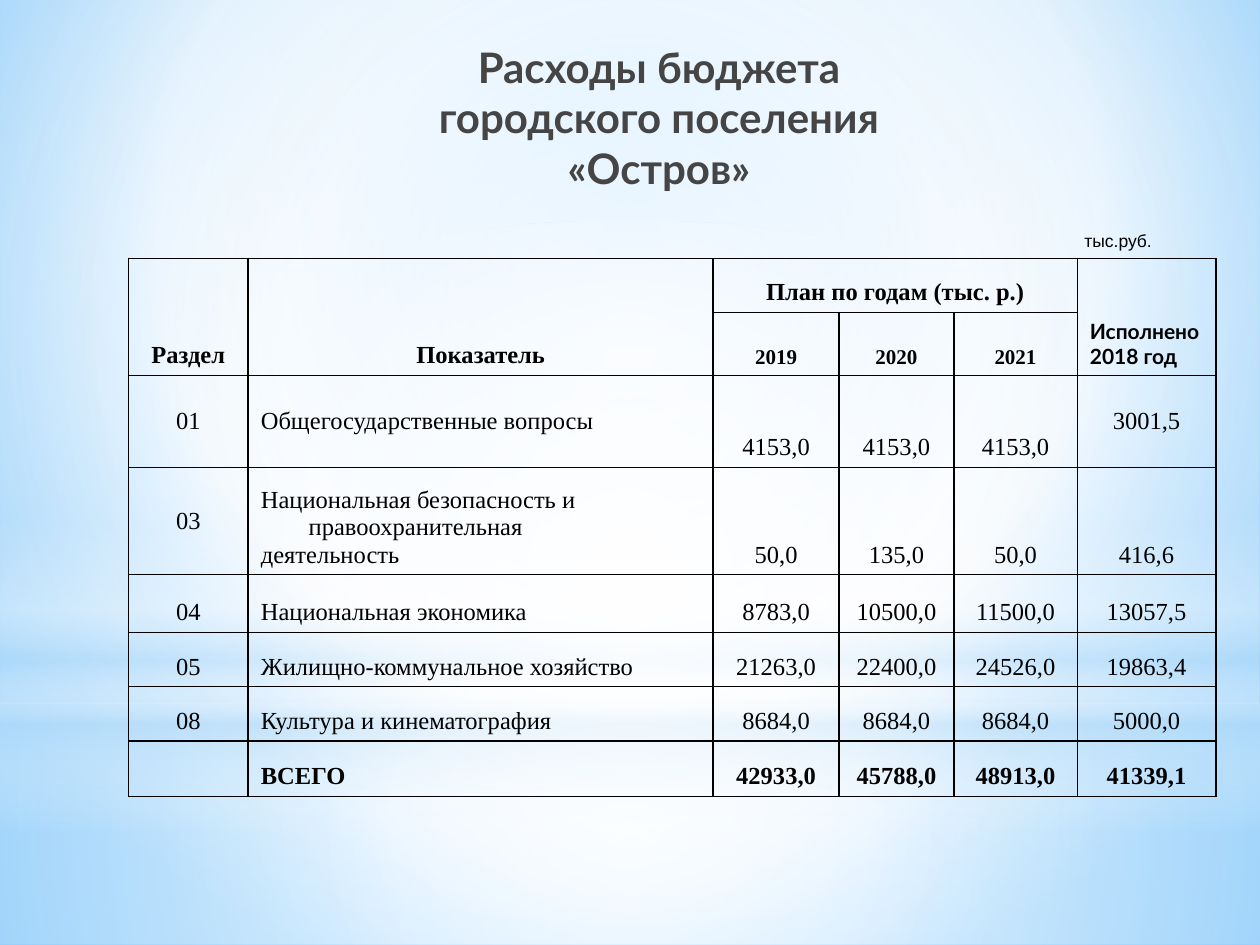
from lxml.etree import SubElement
from pptx import Presentation
from pptx.dml.color import RGBColor
from pptx.enum.shapes import MSO_SHAPE
from pptx.enum.text import MSO_ANCHOR, PP_ALIGN
from pptx.oxml.ns import qn
from pptx.util import Inches, Pt

W, H = 10, 7.5
COLORS = {"text": "000000", "title": "454545", "white": "FFFFFF",
          "haze": "B4DCFA", "sky": "9ED5FF", "deep": "5BB9FF"}
SERIF, SANS = "Times New Roman", "Lato"
HANG = Inches(0.38)
CENTER, LEFT, RIGHT = PP_ALIGN.CENTER, PP_ALIGN.LEFT, PP_ALIGN.RIGHT
MIDDLE_OF_BOX = (50, 50, 50, 50)

COLS = [0.95, 3.69, 1, 0.91, 0.98, 1.1]
ROWS = [0.43, 0.38, 0.73, 0.85, 0.46, 0.43, 0.43, 0.44]
YEARS = ["2019", "2020", "2021"]
BUDGET = [
    ["01", "Общегосударственные вопросы", "4153,0", "4153,0", "4153,0", "3001,5"],
    ["03", "Национальная безопасность и правоохранительная\nдеятельность",
     "50,0", "135,0", "50,0", "416,6"],
    ["04", "Национальная экономика", "8783,0", "10500,0", "11500,0", "13057,5"],
    ["05", "Жилищно-коммунальное хозяйство", "21263,0", "22400,0", "24526,0", "19863,4"],
    ["08", "Культура и кинематография", "8684,0", "8684,0", "8684,0", "5000,0"],
    ["", "ВСЕГО", "42933,0", "45788,0", "48913,0", "41339,1"],
]
# Cells centred vertically, as (row, column); the others sit at the bottom
MIDDLE_CELLS = {(2, 0), (2, 1), (2, 5), (3, 0)}


def write(tf, text, size=14, font=SERIF, color="text", bold=False,
          align=CENTER, hang=False):
    """Fill a text frame, one paragraph for each line of text."""
    tf.word_wrap = True
    for i, line in enumerate(text.split("\n")):
        p = tf.paragraphs[0] if i == 0 else tf.add_paragraph()
        p.alignment = align
        if hang:
            pPr = p._p.get_or_add_pPr()
            pPr.set("marL", str(HANG))
            pPr.set("indent", str(-HANG))
        r = p.add_run()
        r.text = line
        r.font.size, r.font.name, r.font.bold = Pt(size), font, bold
        r.font.color.rgb = RGBColor.from_string(COLORS[color])


def set_gradient(fill, root, stops, center=None):
    """Stops are (position, colour, opacity) in percent; no center means top to bottom."""
    fill.gradient()
    grad = root.find(".//" + qn("a:gradFill"))
    for child in list(grad):
        grad.remove(child)
    gs_list = SubElement(grad, qn("a:gsLst"))
    for pos, color, opacity in stops:
        gs = SubElement(gs_list, qn("a:gs"), pos=str(pos * 1000))
        clr = SubElement(gs, qn("a:srgbClr"), val=COLORS[color])
        if opacity < 100:
            SubElement(clr, qn("a:alpha"), val=str(opacity * 1000))
    if center:
        shade = SubElement(grad, qn("a:path"), path="circle")
        sides = {side: str(v * 1000) for side, v in zip("ltrb", center)}
        SubElement(shade, qn("a:fillToRect"), **sides)
    else:
        SubElement(grad, qn("a:lin"), ang="5400000", scaled="0")


def add_backdrop(slide):
    set_gradient(slide.background.fill, slide.element,
                 [(0, "sky", 100), (60, "white", 100), (100, "deep", 100)],
                 (20, 10, 20, 60))
    horizon = 5.58
    glows = [
        (MSO_SHAPE.RECTANGLE, horizon, H - horizon, MIDDLE_OF_BOX,
         [(0, "white", 91), (37, "white", 76), (100, "haze", 79)]),
        (MSO_SHAPE.RECTANGLE, 0, horizon, MIDDLE_OF_BOX,
         [(0, "white", 89), (48, "white", 62), (100, "haze", 79)]),
        (MSO_SHAPE.RECTANGLE, 4.12, H / 3, None,
         [(0, "white", 0), (29, "white", 30), (45, "haze", 40),
          (55, "white", 26), (65, "haze", 60), (100, "white", 0)]),
        (MSO_SHAPE.OVAL, 1.75, horizon, MIDDLE_OF_BOX,
         [(0, "white", 100), (56, "white", 0)]),
    ]
    for kind, top, height, center, stops in glows:
        sp = slide.shapes.add_shape(kind, 0, Inches(top), Inches(W), Inches(height))
        sp.shadow.inherit = False
        sp.line.fill.background()
        set_gradient(sp.fill, sp.element, stops, center)


def place_title(slide, left, top, width, height):
    title = slide.shapes.title
    title.left, title.top = Inches(left), Inches(top)
    title.width, title.height = Inches(width), Inches(height)
    title.text_frame.vertical_anchor = MSO_ANCHOR.TOP
    write(title.text_frame, "Расходы бюджета\nгородского поселения\n«Остров»",
          size=24, font=SANS, color="title", bold=True)
    slide.shapes._spTree.append(title.element)  # bring in front of the backdrop


def add_unit_label(slide, left, top, width, height):
    box = slide.shapes.add_textbox(*map(Inches, (left, top, width, height)))
    write(box.text_frame, "тыс.руб.", size=10, font="Arial", align=RIGHT)


def format_cell(cell, anchor):
    tcPr = cell._tc.get_or_add_tcPr()
    for side in ("lnL", "lnR", "lnT", "lnB"):
        ln = SubElement(tcPr, qn("a:" + side), w=str(Pt(1)))
        SubElement(SubElement(ln, qn("a:solidFill")), qn("a:srgbClr"),
                   val=COLORS["text"])
    cell.fill.background()
    cell.vertical_anchor = anchor


def fill_header(table):
    for col in (0, 1, 5):
        table.cell(0, col).merge(table.cell(1, col))
    table.cell(0, 2).merge(table.cell(0, 4))
    for col, text in enumerate(["Раздел", "Показатель", "План по годам (тыс. р.)"]):
        write(table.cell(0, col).text_frame, text, bold=True, hang=True)
    write(table.cell(0, 5).text_frame, "Исполнено 2018 год", size=12, font=SANS,
          bold=True, align=LEFT)
    for col, year in enumerate(YEARS, 2):
        write(table.cell(1, col).text_frame, year, size=12, bold=True, hang=True)


def add_budget_table(slide, left, top):
    frame = slide.shapes.add_table(len(ROWS), len(COLS), Inches(left), Inches(top),
                                   Inches(sum(COLS)), Inches(sum(ROWS)))
    table = frame.table
    table.first_row = table.horz_banding = False
    for col, width in zip(table.columns, COLS):
        col.width = Inches(width)
    for row, height in zip(table.rows, ROWS):
        row.height = Inches(height)
    for r in range(len(ROWS)):
        for c in range(len(COLS)):
            middle = (r, c) in MIDDLE_CELLS
            format_cell(table.cell(r, c),
                        MSO_ANCHOR.MIDDLE if middle else MSO_ANCHOR.BOTTOM)
    fill_header(table)
    for r, values in enumerate(BUDGET, 2):
        for c, text in enumerate(values):
            if text:
                write(table.cell(r, c).text_frame, text, hang=True,
                      bold=values is BUDGET[-1], align=LEFT if c == 1 else CENTER)


def main():
    prs = Presentation()
    prs.slide_width, prs.slide_height = Inches(W), Inches(H)
    slide = prs.slides.add_slide(prs.slide_layouts[5])
    add_backdrop(slide)
    place_title(slide, 0.98, 0.28, 8.5, 1.25)
    add_budget_table(slide, 1.02, 2.05)
    add_unit_label(slide, 7.68, 1.78, 1.56, 0.27)
    prs.save("out.pptx")


if __name__ == "__main__":
    main()
